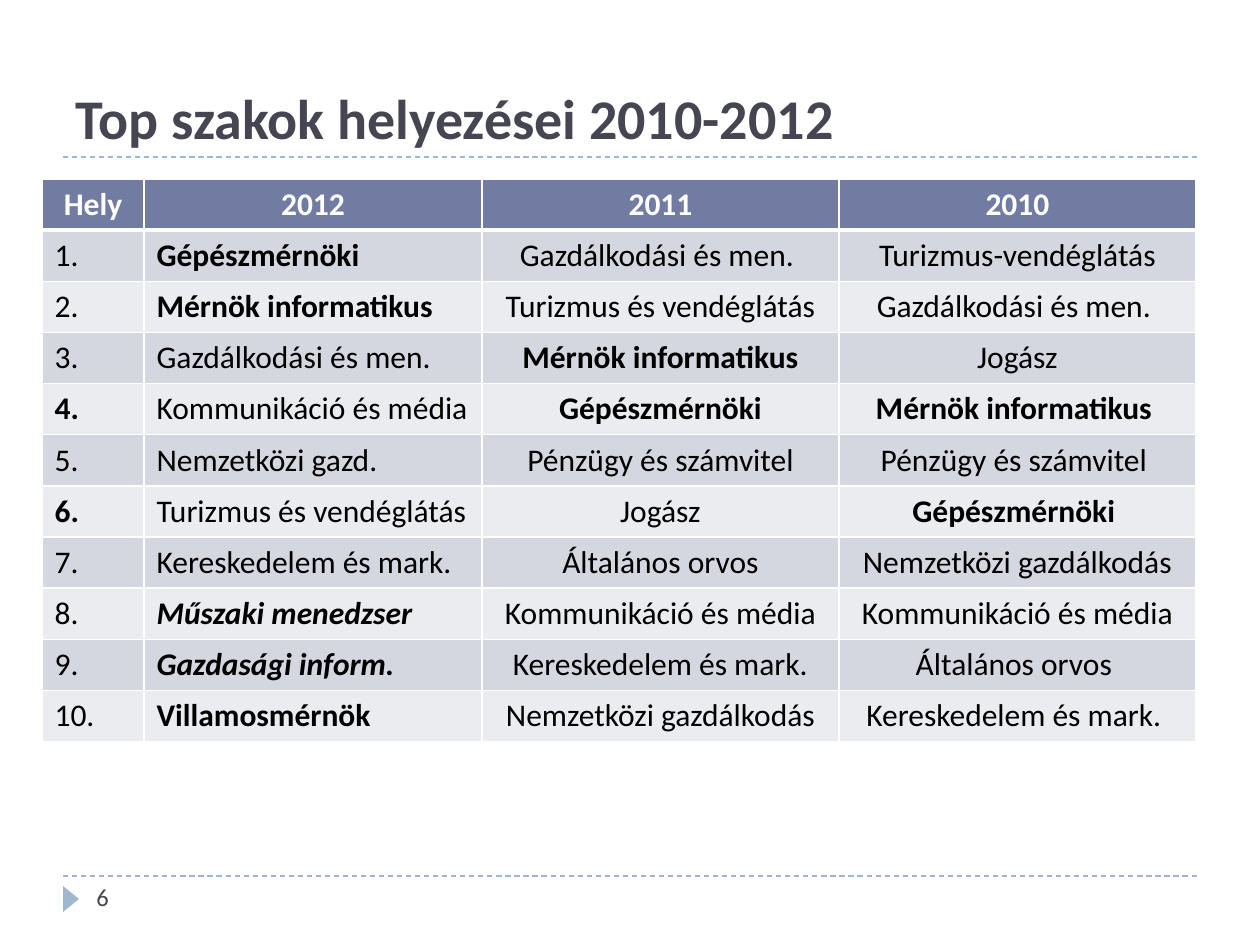
"""Build a slide ranking the most popular degree programmes of 2010-2012."""
from lxml import etree
from pptx import Presentation
from pptx.dml.color import RGBColor
from pptx.enum import dml, shapes, text
from pptx.oxml import ns
from pptx import util as u

TITLE = "Top szakok helyezései 2010-2012"
PAGE_NUMBER = "6"
HEADER = ("Hely", "2012", "2011", "2010")
RANKING = [
    ("1.", "Gépészmérnöki", "Gazdálkodási és men. ", "Turizmus-vendéglátás"),
    ("2.", "Mérnök informatikus", "Turizmus és vendéglátás", "Gazdálkodási és men. "),
    ("3.", "Gazdálkodási és men.", "Mérnök informatikus", "Jogász"),
    ("4.", "Kommunikáció és média", "Gépészmérnöki", "Mérnök informatikus "),
    ("5.", "Nemzetközi gazd.", "Pénzügy és számvitel", "Pénzügy és számvitel "),
    ("6.", "Turizmus és vendéglátás", "Jogász", "Gépészmérnöki "),
    ("7.", "Kereskedelem és mark.", "Általános orvos", "Nemzetközi gazdálkodás"),
    ("8.", "Műszaki menedzser", "Kommunikáció és média", "Kommunikáció és média"),
    ("9.", "Gazdasági inform.", "Kereskedelem és mark.", "Általános orvos "),
    ("10.", "Villamosmérnök", "Nemzetközi gazdálkodás", "Kereskedelem és mark. "),
]
ITALIC = {"Műszaki menedzser", "Gazdasági inform."}
BOLD = ITALIC | {"4.", "6.", "Gépészmérnöki", "Mérnök informatikus", "Villamosmérnök"}

FONT = "Calibri"
WHITE = RGBColor(0xFF, 0xFF, 0xFF)
BLACK = RGBColor(0, 0, 0)
SLATE = RGBColor(0x46, 0x46, 0x53)
ACCENT = RGBColor(0x9F, 0xB8, 0xCD)
HEADER_FILL = RGBColor(0x72, 0x7C, 0xA3)
BANDS = (RGBColor(0xEB, 0xEC, 0xF0), RGBColor(0xD5, 0xD7, 0xE0))

COLUMNS = (102, 338, 357, 357)
TABLE_LEFT, TABLE_TOP, TABLE_HEIGHT = 42, 179, 563
RULES = (157, 876)
RULE_LEFT, RULE_RIGHT = 63, 1197


def px(length):
    return u.Emu(round(length * 914400 / 126))


def write(frame, words, size, color, bold=False, italic=False, align=text.PP_ALIGN.LEFT):
    para = frame.paragraphs[0]
    para.alignment = align
    span = para.add_run()
    span.text = words
    font = span.font
    font.name, font.size = FONT, u.Pt(size)
    font.bold, font.italic = bold, italic
    font.color.rgb = color


def add_rule(page, y):
    rule = page.shapes.add_connector(
        shapes.MSO_CONNECTOR.STRAIGHT, px(RULE_LEFT), px(y), px(RULE_RIGHT), px(y))
    rule.line.color.rgb = ACCENT
    rule.line.width = u.Pt(0.75)
    rule.line.dash_style = dml.MSO_LINE.DASH
    etree.SubElement(rule._element.spPr, ns.qn("a:effectLst"))


def set_border(cell, side, points):
    properties = cell._tc.get_or_add_tcPr()
    line = etree.SubElement(properties, ns.qn(f"a:ln{side}"), w=str(u.Pt(points)))
    fill = etree.SubElement(line, ns.qn("a:solidFill"))
    etree.SubElement(fill, ns.qn("a:srgbClr"), val=str(WHITE))


def fill_cell(cell, words, row, column):
    is_header = row == 0
    name = words.strip()
    centred = is_header or column > 1
    write(cell.text_frame, words, 18, WHITE if is_header else BLACK,
          bold=is_header or name in BOLD, italic=name in ITALIC,
          align=text.PP_ALIGN.CENTER if centred else text.PP_ALIGN.LEFT)
    for side in "LRTB":
        under_header = (row, side) in ((0, "B"), (1, "T"))
        set_border(cell, side, 3 if under_header else 1)
    cell.fill.solid()
    cell.fill.fore_color.rgb = HEADER_FILL if is_header else BANDS[row % 2]


def add_ranking(page):
    rows = [HEADER, *RANKING]
    table = page.shapes.add_table(
        len(rows), len(COLUMNS), px(TABLE_LEFT), px(TABLE_TOP),
        px(sum(COLUMNS)), px(TABLE_HEIGHT)).table
    for column, width in zip(table.columns, COLUMNS):
        column.width = px(width)
    for row, entries in enumerate(rows):
        table.rows[row].height = px(TABLE_HEIGHT / len(rows))
        for column, words in enumerate(entries):
            fill_cell(table.cell(row, column), words, row, column)


def main():
    deck = Presentation()
    deck.slide_width, deck.slide_height = px(1260), px(945)
    page = deck.slides.add_slide(deck.slide_layouts[5])

    title = page.shapes.title
    title.left, title.top, title.width, title.height = px(63), px(21), px(1134), px(136)
    title.text_frame.auto_size = text.MSO_AUTO_SIZE.NONE
    title.text_frame.vertical_anchor = text.MSO_ANCHOR.BOTTOM
    write(title.text_frame, TITLE, 32, SLATE, bold=True)

    for y in RULES:
        add_rule(page, y)

    marker = page.shapes.add_shape(
        shapes.MSO_SHAPE.ISOSCELES_TRIANGLE, px(58), px(891), px(26), px(16))
    marker.rotation = 90
    marker.shadow.inherit = False
    marker.fill.solid()
    marker.fill.fore_color.rgb = ACCENT
    marker.line.fill.background()

    number = page.shapes.add_textbox(px(84), px(876), px(273), px(50))
    number.text_frame.word_wrap = True
    write(number.text_frame, PAGE_NUMBER, 14, SLATE)

    add_ranking(page)
    deck.save("out.pptx")


if __name__ == "__main__":
    main()
